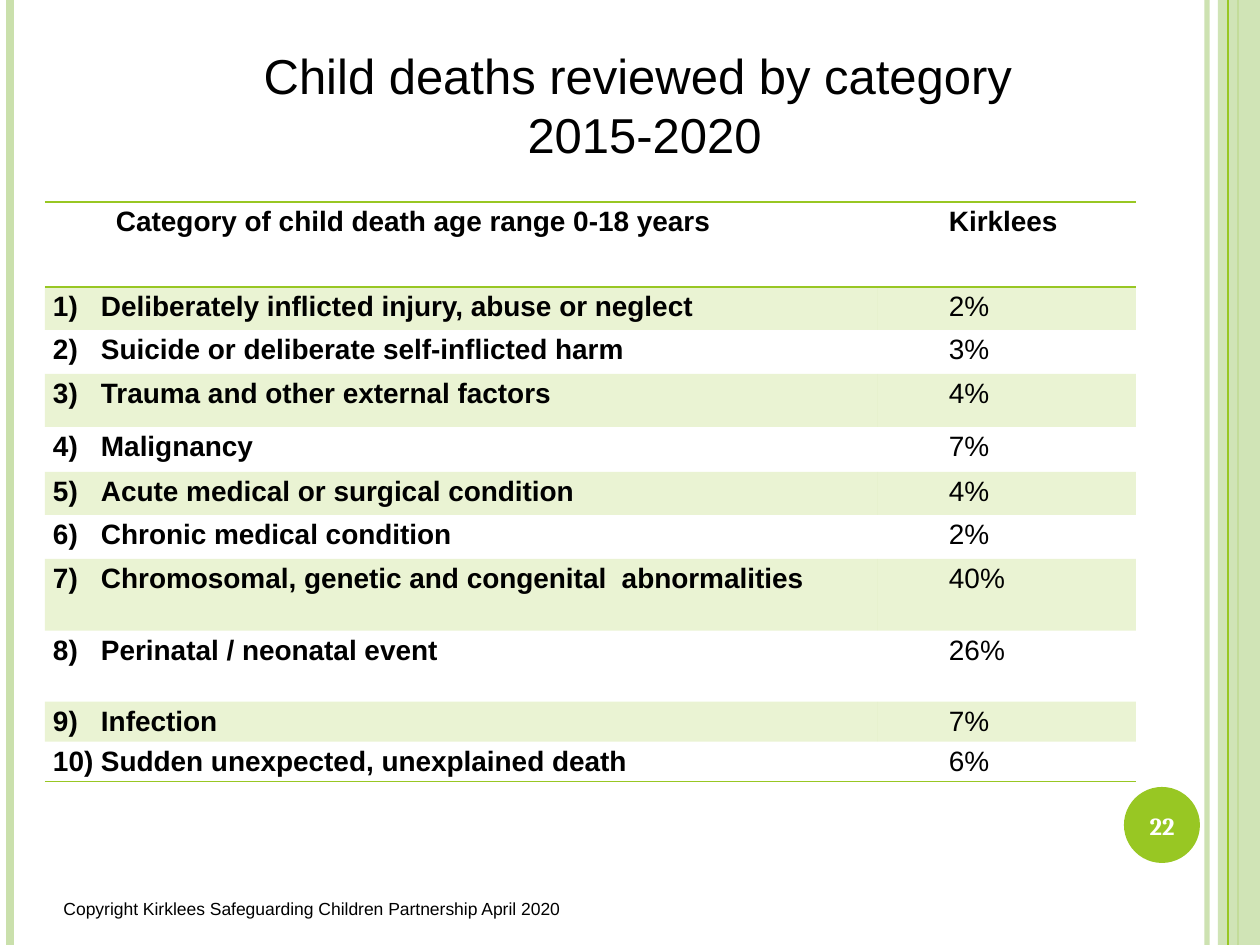
from dataclasses import dataclass

from lxml import etree
from pptx import Presentation, util as u
from pptx.dml import color
from pptx.enum import shapes, text
from pptx.oxml import ns

SCALE = 914400 / 126  # EMU per px
NO_GRID_STYLE = "{2D5ABB26-0587-4C30-8999-92F81FD0307C}"


@dataclass(frozen=True)
class Theme:
    accent: str = "98C723"
    pale: str = "CAE0AC"
    ink: str = "000000"
    paper: str = "FFFFFF"
    body_font: str = "Arial"
    number_font: str = "Cambria"
    title_size: int = 28
    table_size: int = 16
    number_size: int = 14
    footer_size: int = 10


@dataclass(frozen=True)
class Stripe:
    x: int
    width: float
    colour: str
    opacity: int = 100


@dataclass(frozen=True)
class Category:
    name: str
    share: str
    height: int


THEME = Theme()
SLIDE_W, SLIDE_H = 1260, 945
HEADER_H = 85
INDENT, HANGING, CELL_MARGIN = 63, 48, 8
COLUMNS = (833, 258)
BAND_OPACITY = 20

LOWER_STRIPES = [
    Stripe(1207, 3, THEME.pale, 93),
    Stripe(10, 4.5, THEME.pale),
    Stripe(1238, 1.5, THEME.accent),
]
UPPER_STRIPE = Stripe(1228, 0.75, THEME.accent)

CATEGORIES = [
    Category("Deliberately inflicted injury, abuse or neglect", "2%", 43),
    Category("Suicide or deliberate self-inflicted harm", "3%", 44),
    Category("Trauma and other external factors", "4%", 53),
    Category("Malignancy", "7%", 45),
    Category("Acute medical or surgical condition", "4%", 43),
    Category("Chronic medical condition", "2%", 44),
    Category("Chromosomal, genetic and congenital  abnormalities", "40%", 72),
    Category("Perinatal / neonatal event", "26%", 71),
    Category("Infection", "7%", 40),
    Category("Sudden unexpected, unexplained death", "6%", 40),
]


def px(length: int) -> int:
    return round(length * SCALE)


def box(*lengths: int) -> list[int]:
    return [px(length) for length in lengths]


def sub(parent, tag: str, **attributes):
    return etree.SubElement(parent, ns.qn(tag), attributes)


def set_all(target, **values) -> None:
    for name, value in values.items():
        setattr(target, name, value)


def paint(fill, colour: str, opacity: int = 100) -> None:
    fill.solid()
    fill.fore_color.rgb = color.RGBColor.from_string(colour)
    if opacity < 100:
        holder = fill.fore_color._xFill.find(ns.qn("a:srgbClr"))
        sub(holder, "a:alpha", val=str(opacity * 1000))


def write(paragraph, words: str, size: int, colour: str = THEME.ink,
          font: str = THEME.body_font, bold: bool = False, align=text.PP_ALIGN.LEFT) -> None:
    run = paragraph.add_run()
    run.text = words
    paragraph.alignment = align
    set_all(run.font, size=u.Pt(size), name=font, bold=bold)
    run.font.color.rgb = color.RGBColor.from_string(colour)


def draw_stripe(slide, stripe: Stripe) -> None:
    line = slide.shapes.add_connector(
        shapes.MSO_CONNECTOR.STRAIGHT, *box(stripe.x, 0, stripe.x, SLIDE_H))
    line.line.width = u.Pt(stripe.width)
    paint(line.line.fill, stripe.colour, stripe.opacity)
    sub(line._element.spPr, "a:effectLst")


def draw_panel(slide, kind, place: list[int], colour: str, opacity: int = 100) -> None:
    panel = slide.shapes.add_shape(kind, *place)
    panel.shadow.inherit = False
    panel.line.fill.background()
    paint(panel.fill, colour, opacity)


def add_border(cell, side: str) -> None:
    line = sub(cell._tc.get_or_add_tcPr(), side, w=str(u.Pt(1)))
    sub(sub(line, "a:solidFill"), "a:srgbClr", val=THEME.accent)


def fill_cell(cell, words: str, bold: bool, banded: bool,
              borders: tuple[str, ...], number: int = 0) -> None:
    set_all(cell, margin_left=px(CELL_MARGIN), margin_right=px(CELL_MARGIN),
            margin_top=0, margin_bottom=0, vertical_anchor=text.MSO_ANCHOR.TOP)
    for side in borders:
        add_border(cell, side)
    if banded:
        paint(cell.fill, THEME.accent, BAND_OPACITY)
    else:
        cell.fill.background()
    paragraph = cell.text_frame.paragraphs[0]
    paragraph.line_spacing = 1.15
    write(paragraph, words, THEME.table_size, bold=bold)
    properties = paragraph._p.get_or_add_pPr()
    properties.set("marL", str(px(HANGING if number else INDENT)))
    if number:
        properties.set("indent", str(-px(HANGING)))
        sub(properties, "a:buFont", typeface=THEME.body_font)
        sub(properties, "a:buAutoNum", type="arabicParenR", startAt=str(number))


def draw_table(slide) -> None:
    heights = [HEADER_H] + [category.height for category in CATEGORIES]
    frame = slide.shapes.add_table(
        len(heights), len(COLUMNS), *box(45, 202, sum(COLUMNS), sum(heights)))
    table = frame.table
    set_all(table, first_row=True, horz_banding=False)
    table._tbl.tblPr.find(ns.qn("a:tableStyleId")).text = NO_GRID_STYLE
    for column, width in zip(table.columns, COLUMNS):
        column.width = px(width)
    for row, height in zip(table.rows, heights):
        row.height = px(height)

    headings = ("Category of child death age range 0-18 years", "Kirklees")
    for column, heading in enumerate(headings):
        fill_cell(table.cell(0, column), heading, True, False, ("a:lnT", "a:lnB"))
    for number, category in enumerate(CATEGORIES, start=1):
        banded = number % 2 == 1
        borders = ("a:lnB",) if number == len(CATEGORIES) else ()
        fill_cell(table.cell(number, 0), category.name, True, banded, borders, number)
        fill_cell(table.cell(number, 1), category.share, False, banded, borders)


def draw_title(slide) -> None:
    title = slide.shapes.title
    set_all(title, **dict(zip(("left", "top", "width", "height"), box(168, 39, 953, 131))))
    frame = title.text_frame
    set_all(frame, vertical_anchor=text.MSO_ANCHOR.TOP, word_wrap=True,
            auto_size=text.MSO_AUTO_SIZE.NONE)
    for paragraph, words in ((frame.paragraphs[0], "Child deaths reviewed by category "),
                             (frame.add_paragraph(), "2015-2020")):
        write(paragraph, words, THEME.title_size, align=text.PP_ALIGN.CENTER)


def draw_label(slide, place: list[int], words: str, wrap: bool, anchor, **style) -> None:
    frame = slide.shapes.add_textbox(*place).text_frame
    set_all(frame, word_wrap=wrap, vertical_anchor=anchor)
    write(frame.paragraphs[0], words, **style)


def main() -> None:
    deck = Presentation()
    set_all(deck, slide_width=px(SLIDE_W), slide_height=px(SLIDE_H))
    slide = deck.slides.add_slide(deck.slide_layouts[5])

    # Side decoration
    for stripe in LOWER_STRIPES:
        draw_stripe(slide, stripe)
    draw_panel(slide, shapes.MSO_SHAPE.RECTANGLE, box(1218, 0, 42, SLIDE_H), THEME.pale, 87)
    draw_stripe(slide, UPPER_STRIPE)

    # Page number
    draw_panel(slide, shapes.MSO_SHAPE.OVAL, box(1124, 787, 76, 76), THEME.accent)
    draw_label(slide, box(1120, 790, 84, 72), "22", True, text.MSO_ANCHOR.MIDDLE,
               size=THEME.number_size, colour=THEME.paper, font=THEME.number_font,
               bold=True, align=text.PP_ALIGN.CENTER)

    # Content
    draw_table(slide)
    draw_label(slide, box(45, 892, 527, 34),
               "Copyright Kirklees Safeguarding Children Partnership April 2020",
               False, text.MSO_ANCHOR.TOP, size=THEME.footer_size, align=text.PP_ALIGN.RIGHT)
    draw_title(slide)

    deck.save("out.pptx")


if __name__ == "__main__":
    main()
